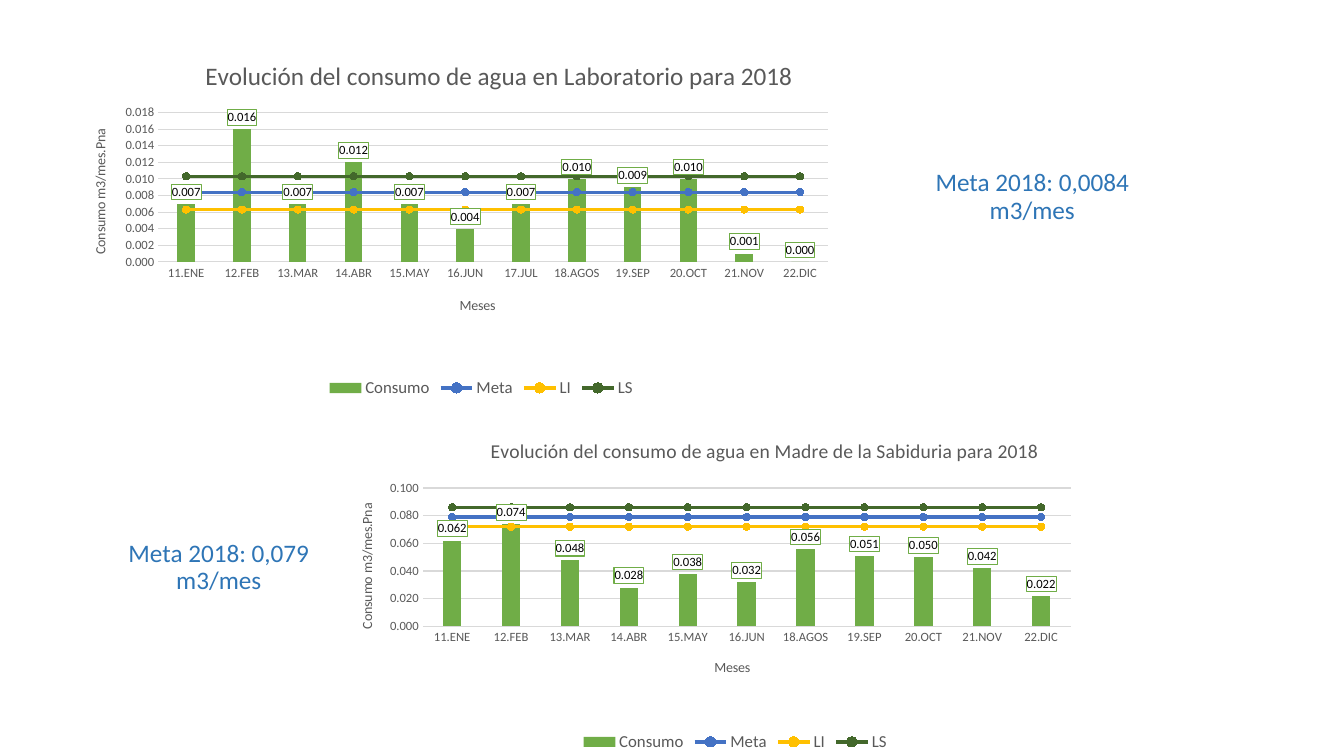
from lxml import etree
from pptx import Presentation
from pptx.chart.data import CategoryChartData
from pptx.dml.color import RGBColor
from pptx.enum.chart import (XL_CHART_TYPE, XL_LABEL_POSITION, XL_LEGEND_POSITION,
                             XL_MARKER_STYLE, XL_TICK_MARK)
from pptx.enum.text import MSO_ANCHOR, PP_ALIGN
from pptx.oxml import parse_xml
from pptx.oxml.ns import nsdecls, qn
from pptx.util import Cm, Pt

COLUMNS = XL_CHART_TYPE.COLUMN_CLUSTERED
OUTSIDE_END = XL_LABEL_POSITION.OUTSIDE_END
BOTTOM = XL_LEGEND_POSITION.BOTTOM
CIRCLE = XL_MARKER_STYLE.CIRCLE
NO_TICK = XL_TICK_MARK.NONE
MIDDLE = MSO_ANCHOR.MIDDLE
CENTER = PP_ALIGN.CENTER

FONT = "Calibri"
BLACK = RGBColor(0x00, 0x00, 0x00)
WHITE = RGBColor(0xFF, 0xFF, 0xFF)
GREY = RGBColor(0x59, 0x59, 0x59)
LIGHT_GREY = RGBColor(0xD9, 0xD9, 0xD9)
GOAL_BLUE = RGBColor(0x2E, 0x75, 0xB6)
GREEN = RGBColor(0x70, 0xAD, 0x47)
BLUE = RGBColor(0x44, 0x72, 0xC4)
GOLD = RGBColor(0xFF, 0xC0, 0x00)
DARK_GREEN = RGBColor(0x43, 0x68, 0x2B)
LIMIT_COLORS = {"Meta": BLUE, "LI": GOLD, "LS": DARK_GREEN}

MONTHS = ["11.ENE", "12.FEB", "13.MAR", "14.ABR", "15.MAY", "16.JUN", "17.JUL",
          "18.AGOS", "19.SEP", "20.OCT", "21.NOV", "22.DIC"]
LAB_USE = [0.007, 0.016, 0.007, 0.012, 0.007, 0.004, 0.007, 0.010, 0.009, 0.010,
           0.001, 0.000]
MADRE_USE = [0.062, 0.074, 0.048, 0.028, 0.038, 0.032, 0.056, 0.051, 0.050, 0.042,
             0.022]


def set_font(font, size, color):
    font.name = FONT
    font.size = Pt(size)
    font.bold = False
    font.color.rgb = color


def manual_layout(x, y, w=None, h=None):
    """Return a c:layout element; with a size it places the inner plot area."""
    inner = '<c:layoutTarget val="inner"/>' if w else ""
    size = f'<c:w val="{w}"/><c:h val="{h}"/>' if w else ""
    return parse_xml(
        f'<c:layout {nsdecls("c")}><c:manualLayout>{inner}'
        f'<c:xMode val="edge"/><c:yMode val="edge"/>'
        f'<c:x val="{x}"/><c:y val="{y}"/>{size}</c:manualLayout></c:layout>')


def set_title(owner, text, size, x, y):
    """Title a chart or an axis at a fraction of the chart's size."""
    title = owner.chart_title if hasattr(owner, "chart_title") else owner.axis_title
    r = title.text_frame.paragraphs[0].add_run()
    r.text = text
    set_font(r.font, size, GREY)
    element = title._element
    for layout in element.findall(qn("c:layout")):
        element.remove(layout)
    element.find(qn("c:tx")).addnext(manual_layout(x, y))


def move_limits_to_lines(chart):
    """Turn every series after the first into a line on the same axes."""
    bars = chart.plots[0]._element
    lines = parse_xml(f'<c:lineChart {nsdecls("c")}><c:grouping val="standard"/>'
                      '<c:varyColors val="0"/></c:lineChart>')
    for ser in bars.findall(qn("c:ser"))[1:]:
        for invert in ser.findall(qn("c:invertIfNegative")):
            ser.remove(invert)
        lines.append(ser)
    etree.SubElement(lines, qn("c:marker")).set("val", "1")
    for axis_id in bars.findall(qn("c:axId")):
        etree.SubElement(lines, qn("c:axId")).set("val", axis_id.get("val"))
    bars.addnext(lines)


def format_columns(plot):
    plot.gap_width = 219
    plot.overlap = -27
    plot.vary_by_categories = False
    series = plot.series[0]
    series.format.fill.solid()
    series.format.fill.fore_color.rgb = GREEN
    labels = series.data_labels
    labels.show_value = True
    labels.number_format = "0.000"
    labels.number_format_is_linked = False
    labels.position = OUTSIDE_END
    set_font(labels.font, 9, BLACK)
    box = parse_xml(
        f'<c:spPr {nsdecls("c", "a")}><a:solidFill><a:srgbClr val="{WHITE}"/></a:solidFill>'
        f'<a:ln w="9525"><a:solidFill><a:srgbClr val="{GREEN}"/></a:solidFill></a:ln></c:spPr>')
    labels._element.find(qn("c:txPr")).addprevious(box)


def format_lines(plot):
    for series in plot.series:
        color = LIMIT_COLORS[series.name]
        series.smooth = False
        series.format.line.color.rgb = color
        series.format.line.width = Pt(2.25)
        series.marker.style = CIRCLE
        series.marker.size = 5
        fmt = series.marker.format
        fmt.fill.solid()
        fmt.fill.fore_color.rgb = color
        fmt.line.color.rgb = color


def format_axes(chart, top, step):
    months, use = chart.category_axis, chart.value_axis
    for axis in (months, use):
        axis.major_tick_mark = axis.minor_tick_mark = NO_TICK
        set_font(axis.tick_labels.font, 9, GREY)
    set_title(months, "Meses", 10, 0.47, 0.7)
    set_title(use, "Consumo m3/mes.Pna", 10, 0.01, 0.24)
    use.minimum_scale, use.maximum_scale, use.major_unit = 0, top, step
    use.tick_labels.number_format = "0.000"
    use.tick_labels.number_format_is_linked = False
    use.format.line.fill.background()
    for line in (months.format.line, use.major_gridlines.format.line):
        line.color.rgb = LIGHT_GREY
        line.width = Pt(0.75)


def add_use_chart(s, box, title, title_size, title_x, months, use, limits, top, step):
    data = CategoryChartData(number_format="0.000")
    data.categories = months
    data.add_series("Consumo", use)
    for name, limit in zip(LIMIT_COLORS, limits):
        data.add_series(name, [limit] * len(months))
    chart = s.shapes.add_chart(COLUMNS, *map(Cm, box), data).chart
    set_font(chart.font, 10, BLACK)
    set_title(chart, title, title_size, title_x, 0.04)
    move_limits_to_lines(chart)
    format_columns(chart.plots[0])
    format_lines(chart.plots[1])
    format_axes(chart, top, step)
    chart.has_legend = True
    chart.legend.position = BOTTOM
    chart.legend.include_in_layout = False
    set_font(chart.legend.font, 12, GREY)
    plot_area = chart.plots[0]._element.getparent()
    for layout in plot_area.findall(qn("c:layout")):
        plot_area.remove(layout)
    plot_area.insert(0, manual_layout(0.097, 0.202, 0.836, 0.412))


def add_goal(s, left, top, goal):
    tf = s.shapes.add_textbox(Cm(left), Cm(top), Cm(6.05), Cm(3.71)).text_frame
    tf.word_wrap = True
    tf.vertical_anchor = MIDDLE
    for i, text in enumerate((f"Meta 2018: {goal}", "m3/mes")):
        p = tf.add_paragraph() if i else tf.paragraphs[0]
        p.alignment = CENTER
        p.line_spacing = 0.9
        r = p.add_run()
        r.text = text
        set_font(r.font, 18, GOAL_BLUE)


def main():
    prs = Presentation()
    prs.slide_width, prs.slide_height = Cm(33.87), Cm(19.05)
    s = prs.slides.add_slide(prs.slide_layouts[6])
    add_use_chart(s, (2.03, 0.99, 20.19, 9.14),
                  "Evolución del consumo de agua en Laboratorio para 2018", 18, 0.15,
                  MONTHS, LAB_USE, (0.0084, 0.0063, 0.0103), 0.018, 0.002)
    add_goal(s, 22.99, 3.12, "0,0084")
    add_use_chart(s, (8.76, 10.59, 19.53, 8.46),
                  "Evolución del consumo de agua en Madre de la Sabiduria para 2018", 14, 0.18,
                  [m for m in MONTHS if m != "17.JUL"], MADRE_USE,
                  (0.079, 0.072, 0.086), 0.1, 0.02)
    add_goal(s, 2.49, 12.45, "0,079")
    prs.save("out.pptx")


if __name__ == "__main__":
    main()
